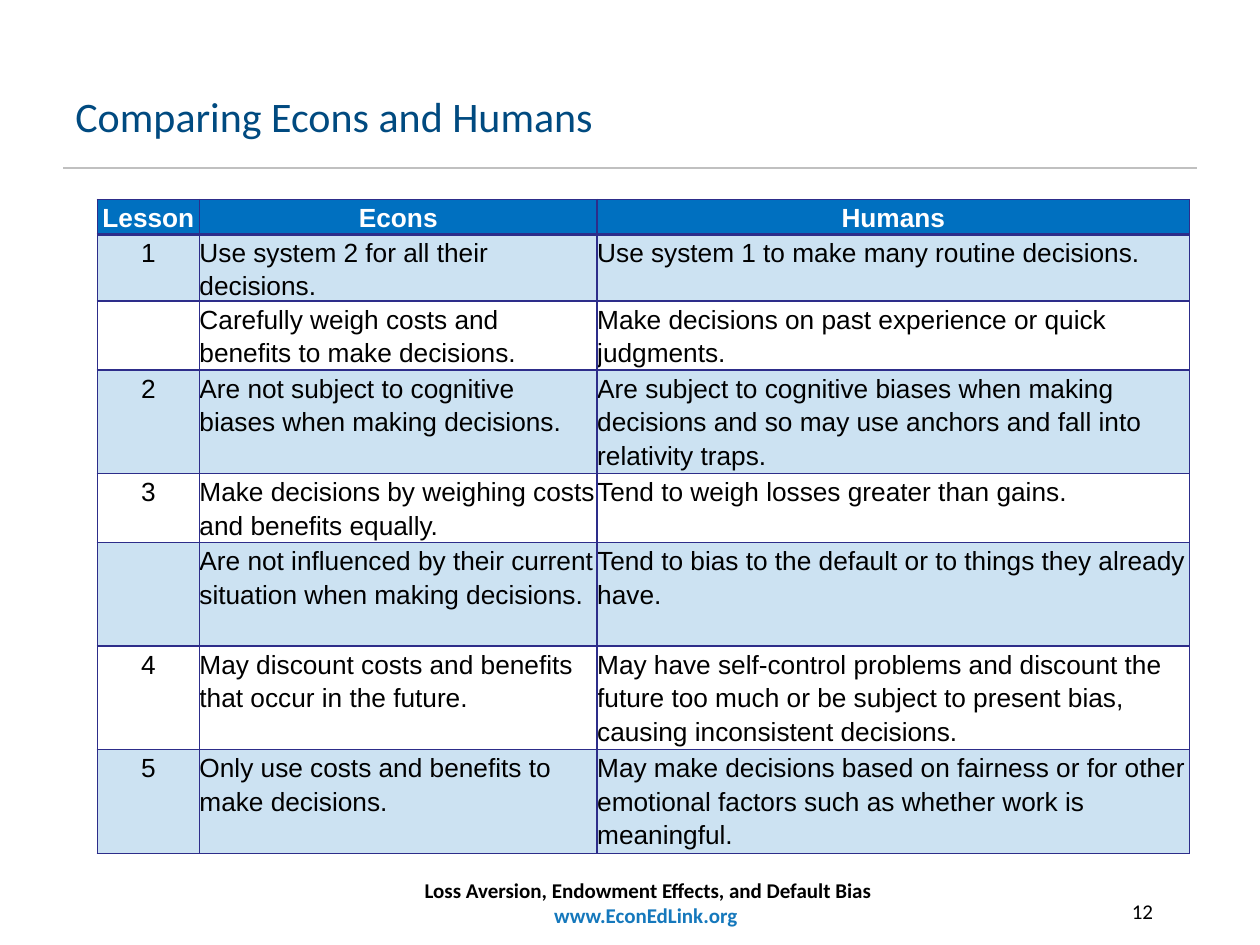
from lxml import etree
from pptx import Presentation
from pptx.dml.color import RGBColor
from pptx.enum.shapes import MSO_CONNECTOR
from pptx.enum.text import PP_ALIGN
from pptx.oxml.ns import qn
from pptx.util import Pt

LEFT, MID, RIGHT = PP_ALIGN.LEFT, PP_ALIGN.CENTER, PP_ALIGN.RIGHT
LINE = MSO_CONNECTOR.STRAIGHT
BLUE, NAVY = "0070C0", "2D2D8A"

ROWS = [
    ("Lesson", "Econs", "Humans"),
    ("1", "Use system 2 for all their decisions.",
     "Use system 1 to make many routine decisions."),
    ("", "Carefully weigh costs and benefits to make decisions.",
     "Make decisions on past experience or quick judgments."),
    ("2", "Are not subject to cognitive biases when making decisions.",
     "Are subject to cognitive biases when making decisions and so may use "
     "anchors and fall into relativity traps."),
    ("3", "Make decisions by weighing costs and benefits equally.",
     "Tend to weigh losses greater than gains."),
    ("", "Are not influenced by their current situation when making decisions.",
     "Tend to bias to the default or to things they already have."),
    ("4", "May discount costs and benefits that occur in the future.",
     "May have self-control problems and discount the future too much or be "
     "subject to present bias, causing inconsistent decisions."),
    ("5", "Only use costs and benefits to make decisions.",
     "May make decisions based on fairness or for other emotional factors "
     "such as whether work is meaningful."),
]
WIDTHS = (58.4, 227.3, 338.4)
HEIGHTS = (19.8, 38, 39.4, 59.2, 39.4, 59.2, 59.2, 59.2)
PITCH = Pt(19.15)

BODY = {"name": "Arial", "size": Pt(15), "bold": False}
HEAD = {**BODY, "bold": True}
TITLE = {"name": "Calibri", "size": Pt(24)}
SMALL = {"name": "Calibri", "size": Pt(12)}
BOLD = {**SMALL, "bold": True}

TEXTS = [
    ((36, 48, 648, 48), LEFT, TITLE, [("Comparing Econs and Humans", "004A80")]),
    ((59.4, 498, 622, 36), MID, BOLD,
     [("Loss Aversion, Endowment Effects, and Default Bias", "000000"),
      ("www.EconEdLink.org ", "1578BC")]),
    ((516, 510, 150, 36), RIGHT, SMALL, [("12", "000000")]),
]


def tint(color, value):
    color.rgb = RGBColor.from_string(value)


def write(para, text, align, style, color):
    para.alignment = align
    run = para.add_run()
    run.text = text
    for key, value in style.items():
        setattr(run.font, key, value)
    tint(run.font.color, color)
    etree.SubElement(para._p, qn("a:endParaRPr"),
                     sz=str(int(style["size"].pt * 100)))


def add_text(slide, place, align, style, lines):
    frame = slide.shapes.add_textbox(*map(Pt, place)).text_frame
    frame.word_wrap = True
    for i, (text, color) in enumerate(lines):
        para = frame.add_paragraph() if i else frame.paragraphs[0]
        write(para, text, align, style, color)


def add_rule(slide):
    rule = slide.shapes.add_connector(LINE, Pt(36), Pt(96), Pt(684), Pt(96))
    rule.line.width = Pt(1.25)
    tint(rule.line.color, "C0C0C0")
    etree.SubElement(rule._element.spPr, qn("a:effectLst"))


def shade(cell, row):
    if row and row % 2 == 0:
        cell.fill.background()
        return
    cell.fill.solid()
    tint(cell.fill.fore_color, BLUE)
    if row:
        color = next(cell._tc.tcPr.iter(qn("a:srgbClr")))
        etree.SubElement(color, qn("a:alpha"), val="20000")


def edge(cell, row):
    for i, side in enumerate("LRTB"):
        thick = row == 0 and side == "B" or row == 1 and side == "T"
        line = etree.Element(qn("a:ln" + side), w=str(Pt(2 if thick else 1)))
        fill = etree.SubElement(line, qn("a:solidFill"))
        etree.SubElement(fill, qn("a:srgbClr"), val=NAVY)
        cell._tc.tcPr.insert(i, line)


def add_grid(slide):
    place = (55.6, 114, sum(WIDTHS), sum(HEIGHTS))
    grid = slide.shapes.add_table(len(ROWS), len(WIDTHS), *map(Pt, place)).table
    grid.horz_banding = False
    for col, width in zip(grid.columns, WIDTHS):
        col.width = Pt(width)
    for r, texts in enumerate(ROWS):
        grid.rows[r].height = Pt(HEIGHTS[r])
        style, color = (BODY, "000000") if r else (HEAD, "FFFFFF")
        for c, text in enumerate(texts):
            cell = grid.cell(r, c)
            for side in ("left", "right", "top", "bottom"):
                setattr(cell, "margin_" + side, 0)
            shade(cell, r)
            edge(cell, r)
            if text:
                para = cell.text_frame.paragraphs[0]
                para.line_spacing = PITCH
                write(para, text, LEFT if r and c else MID, style, color)


def main():
    deck = Presentation()
    deck.slide_width, deck.slide_height = Pt(720), Pt(540)
    slide = deck.slides.add_slide(deck.slide_layouts[6])
    add_rule(slide)
    for item in TEXTS:
        add_text(slide, *item)
    add_grid(slide)
    deck.save("out.pptx")


if __name__ == "__main__":
    main()
